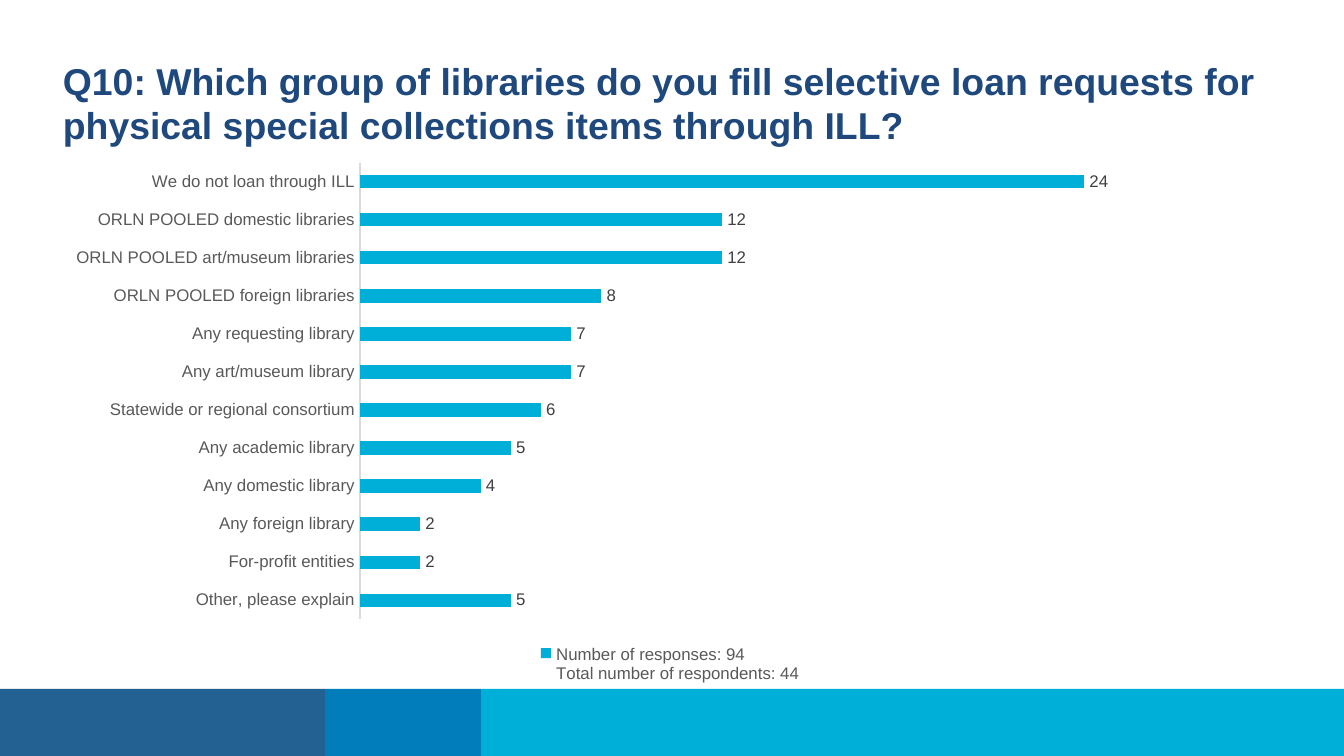
from lxml import etree
from pptx import Presentation
from pptx.chart.data import CategoryChartData
from pptx.dml.color import RGBColor
from pptx.enum.chart import XL_CHART_TYPE as ChartType
from pptx.enum.chart import XL_LABEL_POSITION as LabelPosition
from pptx.enum.chart import XL_LEGEND_POSITION as LegendPosition
from pptx.enum.chart import XL_TICK_LABEL_POSITION as TickLabels
from pptx.enum.chart import XL_TICK_MARK as TickMark
from pptx.enum.shapes import MSO_SHAPE as Shape
from pptx.oxml.ns import qn
from pptx.util import Inches, Pt

COLORS = {
    "navy": "236192",
    "blue": "007DBA",
    "cyan": "00AFD7",
    "title": "1F497D",
    "axis_text": "595959",
    "label_text": "404040",
    "axis_line": "D9D9D9",
}
FONT = "Arial"
SLIDE_WIDTH = 10
SLIDE_HEIGHT = SLIDE_WIDTH * 9 / 16
FOOTER_HEIGHT = 0.5
QUESTION = (
    "Q10: Which group of libraries do you fill selective loan requests for "
    "physical special collections items through ILL?"
)
TOTALS = "Number of responses: 94\nTotal number of respondents: 44"
RESPONSES = [
    ("We do not loan through ILL", 24),
    ("ORLN POOLED domestic libraries", 12),
    ("ORLN POOLED art/museum libraries", 12),
    ("ORLN POOLED foreign libraries", 8),
    ("Any requesting library", 7),
    ("Any art/museum library", 7),
    ("Statewide or regional consortium", 6),
    ("Any academic library", 5),
    ("Any domestic library", 4),
    ("Any foreign library", 2),
    ("For-profit entities", 2),
    ("Other, please explain", 5),
]


def color(name):
    """Return the named palette colour."""
    return RGBColor.from_string(COLORS[name])


def style_font(font, size, color_name, bold=False):
    """Apply the slide's typeface with a size and colour."""
    font.name = FONT
    font.size = Pt(size)
    font.bold = bold
    font.color.rgb = color(color_name)


def add_footer(slide, left, top, width, height):
    """Fill a box with three adjoining colour bands."""
    edges = [0, 2.42, 3.58, width]
    for start, end, name in zip(edges, edges[1:], ("navy", "blue", "cyan")):
        band = slide.shapes.add_shape(
            Shape.RECTANGLE, Inches(left + start), Inches(top),
            Inches(end - start), Inches(height))
        band.shadow.inherit = False
        band.fill.solid()
        band.fill.fore_color.rgb = color(name)
        band.line.fill.background()


def add_question(slide, left, top, width, height):
    """Place the survey question in its box."""
    question = slide.shapes.add_textbox(
        Inches(left), Inches(top), Inches(width), Inches(height))
    question.text_frame.word_wrap = True
    run = question.text_frame.paragraphs[0].add_run()
    run.text = QUESTION
    style_font(run.font, 20, "title", bold=True)


def set_plot_layout(chart, **fractions):
    """Fix the inner plot area as fractions of the chart box."""
    plot_area = chart._chartSpace.chart.plotArea
    for old in plot_area.findall(qn("c:layout")):
        plot_area.remove(old)
    layout = etree.Element(qn("c:layout"))
    manual = etree.SubElement(layout, qn("c:manualLayout"))
    settings = {"layoutTarget": "inner", "xMode": "edge", "yMode": "edge", **fractions}
    for tag, value in settings.items():
        etree.SubElement(manual, qn(f"c:{tag}")).set("val", str(value))
    plot_area.insert(0, layout)


def add_responses(slide, left, top, width, height):
    """Chart the responses by library group."""
    groups, counts = zip(*reversed(RESPONSES))
    data = CategoryChartData()
    data.categories = groups
    data.add_series(TOTALS, counts)
    chart = slide.shapes.add_chart(
        ChartType.BAR_CLUSTERED, Inches(left), Inches(top),
        Inches(width), Inches(height), data).chart
    chart.has_title = False
    chart.font.name = FONT
    chart.font.size = Pt(10)
    set_plot_layout(chart, x=0.25, y=0.02, w=0.73, h=0.85)

    group_axis = chart.category_axis
    group_axis.major_tick_mark = TickMark.NONE
    group_axis.minor_tick_mark = TickMark.NONE
    group_axis.tick_label_position = TickLabels.NEXT_TO_AXIS
    group_axis.format.line.color.rgb = color("axis_line")
    group_axis.format.line.width = Pt(0.75)
    style_font(group_axis.tick_labels.font, 9, "axis_text")

    count_axis = chart.value_axis
    count_axis.minimum_scale = 0
    count_axis.maximum_scale = 30
    count_axis.has_major_gridlines = False
    count_axis.visible = False

    plot = chart.plots[0]
    plot.gap_width = 182
    plot.vary_by_categories = False
    bars = plot.series[0]
    bars.format.fill.solid()
    bars.format.fill.fore_color.rgb = color("cyan")
    labels = bars.data_labels
    labels.show_value = True
    labels.position = LabelPosition.OUTSIDE_END
    style_font(labels.font, 9, "label_text")

    chart.has_legend = True
    chart.legend.position = LegendPosition.BOTTOM
    chart.legend.include_in_layout = False
    style_font(chart.legend.font, 9, "axis_text")


def main():
    """Build and save the survey slide."""
    deck = Presentation()
    deck.slide_width = Inches(SLIDE_WIDTH)
    deck.slide_height = Inches(SLIDE_HEIGHT)
    slide = deck.slides.add_slide(deck.slide_layouts[6])
    add_footer(slide, 0, SLIDE_HEIGHT - FOOTER_HEIGHT, SLIDE_WIDTH, FOOTER_HEIGHT)
    add_question(slide, 0.37, 0.38, 9.23, 0.75)
    add_responses(slide, 0.37, 1.13, 9.23, 4)
    deck.save("out.pptx")


if __name__ == "__main__":
    main()
